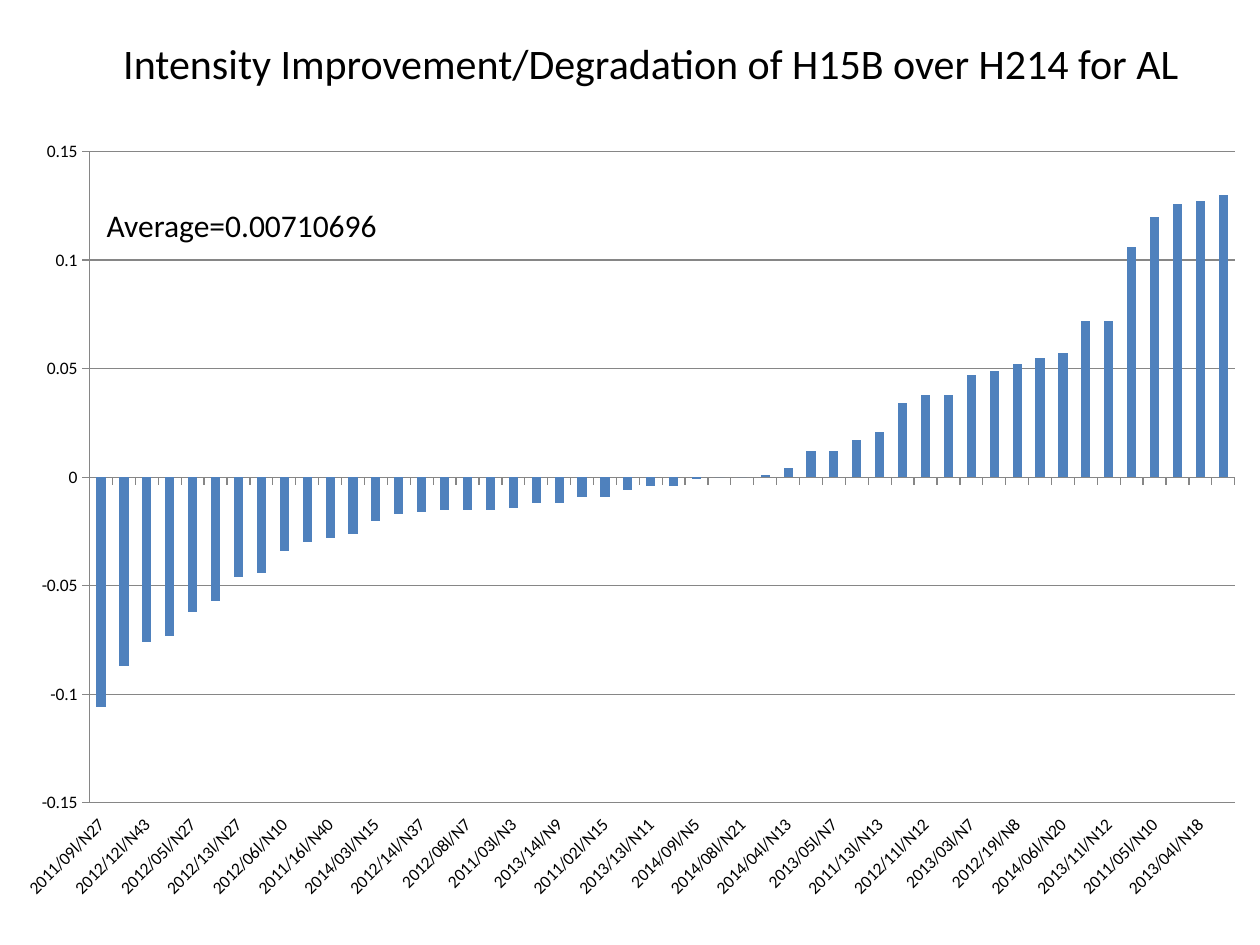
from pptx import Presentation
from pptx.chart.data import CategoryChartData
from pptx.dml.color import RGBColor
from pptx.enum.chart import XL_CHART_TYPE, XL_TICK_LABEL_POSITION, XL_TICK_MARK
from pptx.enum.text import PP_ALIGN
from pptx.oxml.ns import qn
from pptx.util import Cm, Pt

BLACK = RGBColor(0x00, 0x00, 0x00)
BLUE = RGBColor(0x4F, 0x81, 0xBD)
GRAY = RGBColor(0x86, 0x86, 0x86)
FONT = "Calibri"

TEXTS = [
    ("Intensity Improvement/Degradation of H15B over H214 for AL",
     24, PP_ALIGN.CENTER, (1.48, 0.64, 23.29, 1.27)),
    ("Average=0.00710696", 18, PP_ALIGN.LEFT, (1.9, 4.03, 9.96, 1.02)),
]

STORMS = [
    ("2011/09l/N27", -0.106), ("2012/18l/N29", -0.087),
    ("2012/12l/N43", -0.076), ("2011/18l/N15", -0.073),
    ("2012/05l/N27", -0.062), ("2014/01l/N18", -0.057),
    ("2012/13l/N27", -0.046), ("2013/10l/N11", -0.044),
    ("2012/06l/N10", -0.034), ("2013/01l/N9", -0.03),
    ("2011/16l/N40", -0.028), ("2012/17l/N20", -0.026),
    ("2014/03l/N15", -0.02), ("2012/03l/N11", -0.017),
    ("2012/14l/N37", -0.016), ("2011/17l/N52", -0.015),
    ("2012/08l/N7", -0.015), ("2011/12l/N44", -0.015),
    ("2011/03l/N3", -0.014), ("2012/04l/N8", -0.012),
    ("2013/14l/N9", -0.012), ("2011/08l/N6", -0.009),
    ("2011/02l/N15", -0.009), ("2011/06l/N5", -0.006),
    ("2013/13l/N11", -0.004), ("2013/09l/N37", -0.004),
    ("2014/09l/N5", -0.001), ("2012/10l/N1", 0),
    ("2014/08l/N21", 0), ("2011/04l/N3", 0.001),
    ("2014/04l/N13", 0.004), ("2011/14l/N10", 0.012),
    ("2013/05l/N7", 0.012), ("2012/07l/N9", 0.017),
    ("2011/13l/N13", 0.021), ("2014/07l/N9", 0.034),
    ("2012/11l/N12", 0.038), ("2013/07l/N28", 0.038),
    ("2013/03l/N7", 0.047), ("2011/07l/N7", 0.049),
    ("2012/19l/N8", 0.052), ("2012/02l/N19", 0.055),
    ("2014/06l/N20", 0.057), ("2011/15l/N10", 0.072),
    ("2013/11l/N12", 0.072), ("2012/01l/N8", 0.106),
    ("2011/05l/N10", 0.12), ("2013/12l/N5", 0.126),
    ("2013/04l/N18", 0.127), ("2012/09l/N29", 0.13),
]


def add_storm_chart(s):
    data = CategoryChartData(number_format="General")
    data.categories = [storm for storm, _ in STORMS]
    data.add_series("Series 1", [change for _, change in STORMS])
    chart = s.shapes.add_chart(XL_CHART_TYPE.COLUMN_CLUSTERED, Cm(0), Cm(2.54),
                               Cm(25.4), Cm(15.88), data).chart
    chart.has_legend = False
    chart.has_title = False
    chart.font.name = FONT
    chart.font.size = Pt(10)
    chart.font.color.rgb = BLACK

    plot = chart.plots[0]
    plot.gap_width = 150
    plot.vary_by_categories = False
    fill = plot.series[0].format.fill
    fill.solid()
    fill.fore_color.rgb = BLUE
    plot.series[0].invert_if_negative = False

    cat, val = chart.category_axis, chart.value_axis
    for axis in (cat, val):
        axis.major_tick_mark = XL_TICK_MARK.OUTSIDE
        axis.minor_tick_mark = XL_TICK_MARK.NONE
        axis.format.line.color.rgb = GRAY
        axis.format.line.width = Pt(0.75)
    cat.tick_label_position = XL_TICK_LABEL_POSITION.LOW
    cat.tick_labels.font.size = Pt(10)
    cat._element.find(qn("c:txPr")).find(qn("a:bodyPr")).set("rot", "-2700000")
    val.has_major_gridlines = True
    val.major_gridlines.format.line.color.rgb = GRAY
    val.major_gridlines.format.line.width = Pt(0.75)


def add_text(s, text, size, align, box):
    tf = s.shapes.add_textbox(*map(Cm, box)).text_frame
    tf.word_wrap = True
    p = tf.paragraphs[0]
    p.alignment = align
    r = p.add_run()
    r.text = text
    r.font.name = FONT
    r.font.size = Pt(size)
    r.font.color.rgb = BLACK


def main():
    prs = Presentation()
    prs.slide_width, prs.slide_height = Cm(25.4), Cm(19.05)
    s = prs.slides.add_slide(prs.slide_layouts[6])
    add_storm_chart(s)
    for item in TEXTS:
        add_text(s, *item)
    prs.save("out.pptx")


if __name__ == "__main__":
    main()
